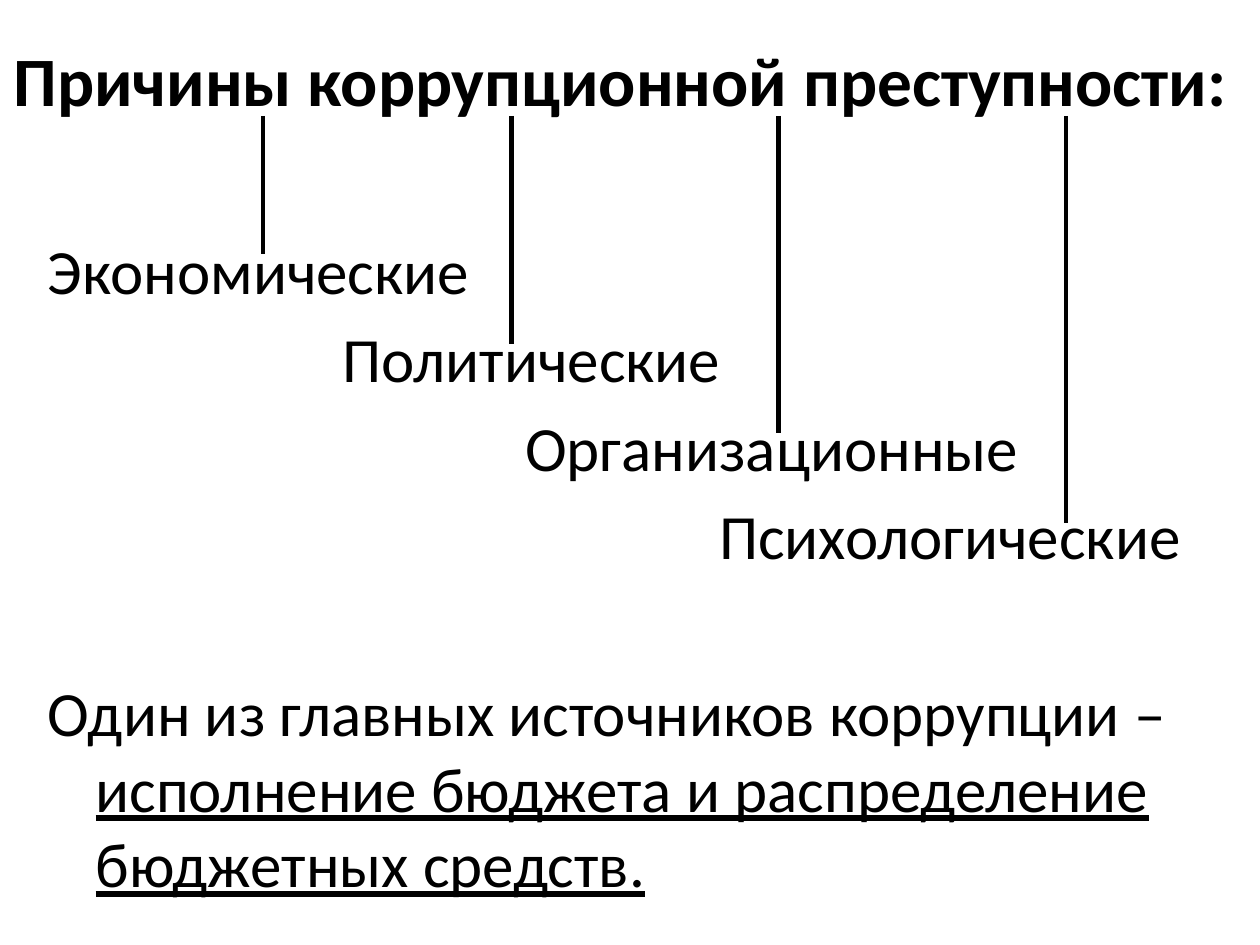
from pptx import Presentation
from pptx.dml.color import RGBColor
from pptx.enum.shapes import MSO_CONNECTOR
from pptx.enum.text import MSO_ANCHOR, PP_ALIGN
from pptx.oxml.ns import qn
from pptx.util import Inches, Pt

STRAIGHT = MSO_CONNECTOR.STRAIGHT
MIDDLE = MSO_ANCHOR.MIDDLE
CENTER = PP_ALIGN.CENTER
COLORS = {"ink": "000000", "paper": "FFFFFF"}
INK = RGBColor.from_string(COLORS["ink"])
FONT = "Calibri"

# cause, text indent, x of its line
CAUSES = [
    ("Экономические", 0, 2.09),
    ("Политические", 2.34, 4.06),
    ("Организационные", 3.79, 6.18),
    ("Психологические", 5.33, 8.46),
]
LINE_TOP, FIRST_LINE_END, ROW_STEP = 0.92, 2.02, 0.71


def style_run(run, size):
    run.font.name = FONT
    run.font.size = Pt(size)
    run.font.color.rgb = INK


prs = Presentation()
prs.slide_width, prs.slide_height = Inches(10), Inches(7.5)
slide = prs.slides.add_slide(prs.slide_layouts[6])
slide.background.fill.solid()
slide.background.fill.fore_color.rgb = RGBColor.from_string(COLORS["paper"])

# Title
title = slide.shapes.add_textbox(0, 0, Inches(9.85), Inches(1.25)).text_frame
title.word_wrap = True
title.vertical_anchor = MIDDLE
title.margin_left = title.margin_right = 0
title.text = "Причины коррупционной преступности:"
title.paragraphs[0].alignment = CENTER
style_run(title.paragraphs[0].runs[0], 39.6)
title.paragraphs[0].runs[0].font.bold = True

# Causes, stepping to the right, then the conclusion
body = slide.shapes.add_textbox(
    Inches(0.28), Inches(1.79), Inches(9.45), Inches(5.5)
).text_frame
body.word_wrap = True
for row, (cause, indent, line_x) in enumerate(CAUSES):
    paragraph = body.add_paragraph() if row else body.paragraphs[0]
    paragraph.text = cause
    paragraph._p.get_or_add_pPr().set("marL", str(Inches(indent)))
    if row:
        paragraph.space_before = Pt(7.2)
    style_run(paragraph.runs[0], 36)

    line = slide.shapes.add_connector(
        STRAIGHT, Inches(line_x), Inches(LINE_TOP),
        Inches(line_x), Inches(FIRST_LINE_END + row * ROW_STEP))
    line.line.color.rgb = INK
    line.line.width = Pt(2.5)
    properties = line._element.spPr
    properties.append(properties.makeelement(qn("a:effectLst"), {}))

conclusion = body.add_paragraph()
conclusion.space_before = Pt(58)
hanging = conclusion._p.get_or_add_pPr()
hanging.set("marL", str(Inches(0.38)))
hanging.set("indent", str(Inches(-0.38)))
for text, underlined in [
    ("Один из главных источников коррупции – ", False),
    ("исполнение бюджета и распределение бюджетных средств.", True),
]:
    run = conclusion.add_run()
    run.text = text
    style_run(run, 36)
    run.font.underline = underlined

prs.save("out.pptx")
